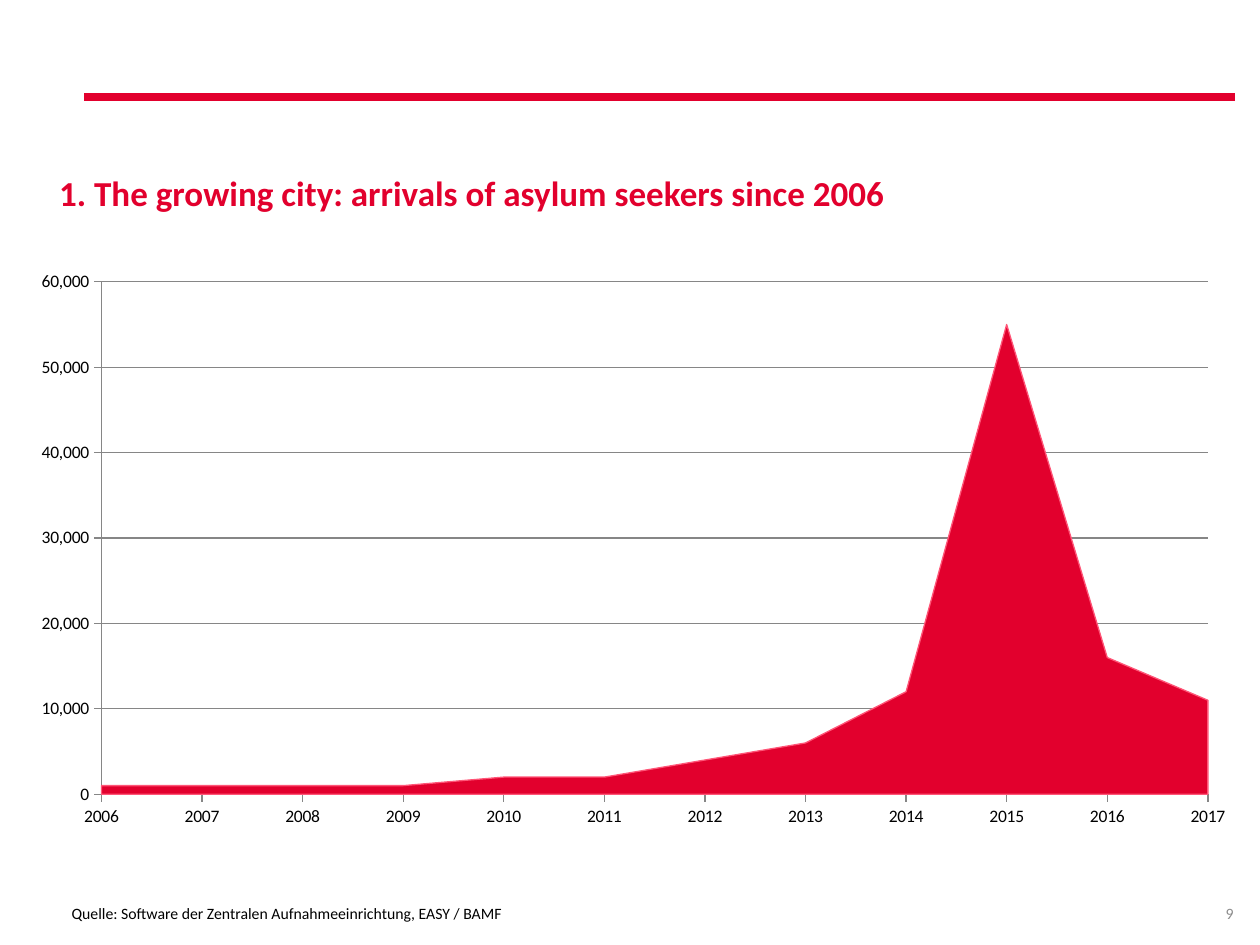
from lxml import etree
from pptx import Presentation
from pptx.chart.data import CategoryChartData
from pptx.dml.color import RGBColor
from pptx.enum.chart import XL_CHART_TYPE, XL_TICK_MARK
from pptx.enum.shapes import MSO_CONNECTOR
from pptx.enum.text import MSO_ANCHOR, PP_ALIGN
from pptx.oxml import parse_xml
from pptx.oxml.ns import nsdecls, qn
from pptx.util import Inches, Pt

AREA_STACKED = XL_CHART_TYPE.AREA_STACKED
TICK_OUTSIDE = XL_TICK_MARK.OUTSIDE
STRAIGHT = MSO_CONNECTOR.STRAIGHT
TOP = MSO_ANCHOR.TOP
LEFT, RIGHT = PP_ALIGN.LEFT, PP_ALIGN.RIGHT

FONT = "Calibri"
RED = "E2002D"
BLACK = "000000"
GRAY = "8C8C8C"
ARRIVALS = {
    "2006": 1000, "2007": 1000, "2008": 1000, "2009": 1000,
    "2010": 2000, "2011": 2000, "2012": 4000, "2013": 6000,
    "2014": 12000, "2015": 55000, "2016": 16000, "2017": 11000,
}


def color(value):
    return RGBColor.from_string(value)


def add_text(page, text, left, top, width, height, size, ink,
             bold=False, align=LEFT, margins=(0, 0)):
    """Add a one-paragraph box; margins are (horizontal, vertical) in inches."""
    box = page.shapes.add_textbox(Inches(left), Inches(top), Inches(width), Inches(height))
    frame = box.text_frame
    frame.word_wrap = True
    frame.vertical_anchor = TOP
    frame.margin_left = frame.margin_right = Inches(margins[0])
    frame.margin_top = frame.margin_bottom = Inches(margins[1])
    frame.text = text
    para = frame.paragraphs[0]
    para.alignment = align
    font = para.runs[0].font
    font.name = FONT
    font.size = Pt(size)
    font.bold = bold
    font.color.rgb = color(ink)


deck = Presentation()
deck.slide_width, deck.slide_height = Inches(10), Inches(7.5)
page = deck.slides.add_slide(deck.slide_layouts[6])

add_text(page, "1. The growing city: arrivals of asylum seekers since 2006",
         0.47, 1.36, 7.64, 0.67, 20, RED, bold=True)

# Area chart of arrivals per year
chart_data = CategoryChartData(number_format="#,##0")
chart_data.categories = list(ARRIVALS)
chart_data.add_series("Series 1", list(ARRIVALS.values()))
chart = page.shapes.add_chart(AREA_STACKED, Inches(0.13), Inches(2.1),
                              Inches(9.65), Inches(4.57), chart_data).chart
chart.has_legend = False
chart.has_title = False
chart.font.name = FONT
chart.font.size = Pt(18)
chart.font.color.rgb = color(BLACK)

area = chart.plots[0].series[0]
area.format.fill.solid()
area.format.fill.fore_color.rgb = color(RED)
area.format.line.color.rgb = color("FF5577")
area.format.line.width = Pt(0.75)

years, counts = chart.category_axis, chart.value_axis
for axis in (years, counts):
    axis.major_tick_mark = TICK_OUTSIDE
    axis.tick_labels.font.size = Pt(10)
    axis.tick_labels.font.name = FONT
    axis.tick_labels.font.color.rgb = color(BLACK)
    axis.format.line.color.rgb = color("868686")
years.has_major_gridlines = False
counts.has_major_gridlines = True
counts.major_gridlines.format.line.color.rgb = color("868686")
counts.minimum_scale, counts.maximum_scale, counts.major_unit = 0, 60000, 10000
counts.tick_labels.number_format = "#,##0"
counts.tick_labels.number_format_is_linked = False

# The area starts on the value axis, and the plot has a fixed inner layout
chart.element.find(".//" + qn("c:crossBetween")).set("val", "midCat")
plot_area = chart.element.find(".//" + qn("c:plotArea"))
for old_layout in plot_area.findall(qn("c:layout")):
    plot_area.remove(old_layout)
layout = parse_xml(f"<c:layout {nsdecls('c')}><c:manualLayout/></c:layout>")
for tag, value in (("layoutTarget", "inner"), ("xMode", "edge"), ("yMode", "edge"),
                   ("x", "0.07"), ("y", "0.03"), ("w", "0.91"), ("h", "0.89")):
    etree.SubElement(layout[0], qn("c:" + tag)).set("val", value)
plot_area.insert(0, layout)

add_text(page, "9", 9.13, 7.17, 0.66, 0.2, 9, GRAY, align=RIGHT)
add_text(page, "Quelle: Software der Zentralen Aufnahmeeinrichtung, EASY / BAMF",
         0.47, 7.12, 7.82, 0.25, 9, BLACK, margins=(0.1, 0.05))

rule = page.shapes.add_connector(STRAIGHT, Inches(0.67), Inches(0.77),
                                 Inches(9.8), Inches(0.77))
rule.line.color.rgb = color(RED)
rule.line.width = Pt(4.75)
etree.SubElement(rule.element.spPr, qn("a:effectLst"))

deck.save("out.pptx")
